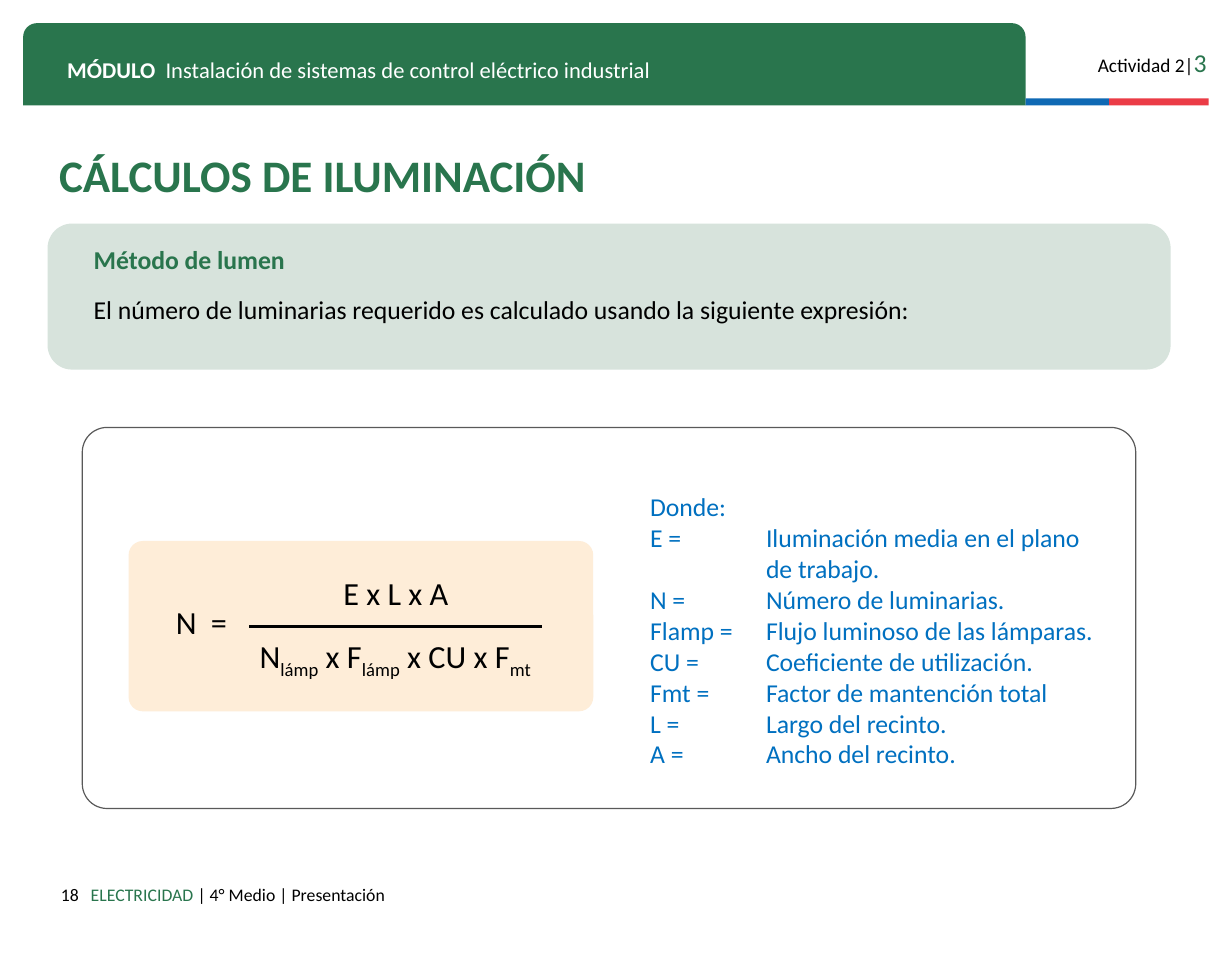
"""Builds the lighting calculation slide: lumen method formula and its terms."""
import pptx
import pptx.dml.color
import pptx.enum.shapes
import pptx.enum.text
import pptx.oxml
import pptx.util

WIDTH, HEIGHT = 10.63, 8.27
FONT = "Calibri"
GREEN, BLACK, WHITE, BLUE = "29754D", "000000", "FFFFFF", "0070C0"
LEFT, CENTER, RIGHT = (pptx.enum.text.PP_ALIGN.LEFT, pptx.enum.text.PP_ALIGN.CENTER,
                       pptx.enum.text.PP_ALIGN.RIGHT)
TOP, MIDDLE = pptx.enum.text.MSO_ANCHOR.TOP, pptx.enum.text.MSO_ANCHOR.MIDDLE
KIND = pptx.enum.shapes.MSO_SHAPE

# Areas are (left, top, width, height) in percent of the slide.
TITLE = "CÁLCULOS DE ILUMINACIÓN"
TITLE_AREA = (3.86, 15.6, 91.16, 6.29)
TERMS = [
    ("E =", "Iluminación media en el plano"),
    ("", "de trabajo."),
    ("N =", "Número de luminarias."),
    ("Flamp =", "Flujo luminoso de las lámparas."),
    ("CU =", "Coeficiente de utilización."),
    ("Fmt =", "Factor de mantención total"),
    ("L =", "Largo del recinto."),
    ("A =", "Ancho del recinto."),
]
TERMS_AREA = (51.83, 49.58, 40.26, 32.41)

PANELS = [
    (KIND.ROUND_2_SAME_RECTANGLE, (1.88, 2.42, 81.37, 8.59), (0.167, 0), GREEN, None),
    (KIND.RECTANGLE, (83.25, 10.28, 6.77, 0.73), (), "0F69B4", None),
    (KIND.RECTANGLE, (90.03, 10.28, 8.09, 0.73), (), "EB3C46", None),
    (KIND.ROUNDED_RECTANGLE, (3.86, 23.34, 91.16, 15.24), (0.168,), "D7E3DC", None),
    (KIND.ROUNDED_RECTANGLE, (6.68, 44.62, 85.51, 39.78), (0.065,), None, "595959"),
    (KIND.ROUNDED_RECTANGLE, (10.44, 56.47, 37.72, 17.78), (0.083,), "FEEDD8", None),
]

# Runs are (text, size, colour, bold, baseline).
ACTIVITY = [("Actividad 2|", 12, BLACK, False, 0), ("3", 16, GREEN, False, 0)]
MODULE = [("MÓDULO", 14, WHITE, True, 0),
          ("\tInstalación de sistemas de control eléctrico industrial", 14, WHITE, False, 0)]
PAGE = [("18", 11, BLACK, False, 0)]
COURSE = [("ELECTRICIDAD ", 11, GREEN, False, 0),
          ("| 4° Medio | Presentación", 11, BLACK, False, 0)]
METHOD = [("Método de lumen", 16, GREEN, True, 0)]
METHOD_TEXT = [("El número de luminarias requerido es calculado usando la siguiente expresión:",
                16, BLACK, False, 0)]
RESULT = [("N\t=", 20, BLACK, False, 0)]
NUMERATOR = [("E x L x A", 20, BLACK, False, 0)]
DENOMINATOR = [(text, 20, BLACK, False, base) for text, base in
               [("N", 0), ("lámp", -25), (" x F", 0), ("lámp", -25), (" x CU x F", 0), ("mt", -25)]]

# Texts are (area, paragraphs, alignment, anchor, vertical inset, space before, hanging indent).
TEXTS = [
    ((86.83, 3.63, 12.04, 4.59), [ACTIVITY], RIGHT, TOP, 0.1, 0, 0),
    ((4.52, 4.59, 76.58, 4.23), [MODULE], LEFT, TOP, 0.1, 0, 0.85),
    ((1.88, 91.05, 5.46, 3.51), [PAGE], RIGHT, TOP, 0.1, 0, 0),
    ((6.44, 91.05, 69.8, 4.59), [COURSE], LEFT, TOP, 0.1, 0, 0),
    ((6.68, 23.34, 85.51, 12.58), [METHOD, METHOD_TEXT], LEFT, MIDDLE, 0.1, 12, 0),
    ((13.36, 62.27, 6.3, 5.32), [RESULT], LEFT, TOP, 0.05, 0, 0.3),
    ((20.23, 59.25, 23.8, 5.32), [NUMERATOR], CENTER, TOP, 0.05, 0, 0),
    ((19.57, 65.78, 25.02, 5.32), [DENOMINATOR], CENTER, TOP, 0.05, 0, 0),
]
FRACTION_BAR = (20.23, 65.42, 23.8, 0)


def rgb(colour):
    return pptx.dml.color.RGBColor.from_string(colour)


def place(area):
    sides = (WIDTH, HEIGHT, WIDTH, HEIGHT)
    return [pptx.util.Inches(share * side / 100) for share, side in zip(area, sides)]


def write(shape, paragraphs, align, anchor, inset, before=0, hang=0, spacing=1.0):
    frame = shape.text_frame
    frame.word_wrap = True
    frame.auto_size = pptx.enum.text.MSO_AUTO_SIZE.NONE
    frame.vertical_anchor = anchor
    frame.margin_left = frame.margin_right = pptx.util.Inches(0.1)
    frame.margin_top = frame.margin_bottom = pptx.util.Inches(inset)
    for number, runs in enumerate(paragraphs):
        paragraph = frame.add_paragraph() if number else frame.paragraphs[0]
        paragraph.alignment = align
        paragraph.line_spacing = spacing
        paragraph.space_before = pptx.util.Pt(before)
        properties = paragraph._p.get_or_add_pPr()
        properties.set("marL", str(pptx.util.Inches(hang)))
        properties.set("indent", str(-pptx.util.Inches(hang)))
        pptx.oxml.xmlchemy.OxmlElement
        properties.append(pptx.oxml.parse_xml(
            '<a:buNone xmlns:a="http://schemas.openxmlformats.org/drawingml/2006/main"/>'))
        for text, size, colour, bold, baseline in runs:
            run = paragraph.add_run()
            run.text = text
            run.font.name, run.font.size, run.font.bold = FONT, pptx.util.Pt(size), bold
            run.font.color.rgb = rgb(colour)
            if baseline:
                run.font._element.set("baseline", str(baseline * 1000))


def add_panel(slide, kind, area, corners, fill, line):
    panel = slide.shapes.add_shape(kind, *place(area))
    panel.shadow.inherit = False
    for index, corner in enumerate(corners):
        panel.adjustments[index] = corner
    if fill:
        panel.fill.solid()
        panel.fill.fore_color.rgb = rgb(fill)
    else:
        panel.fill.background()
    if line:
        panel.line.color.rgb = rgb(line)
        panel.line.width = pptx.util.Pt(0.75)
    else:
        panel.line.fill.background()


def add_bar(slide, area):
    left, top, width, height = place(area)
    bar = slide.shapes.add_connector(pptx.enum.shapes.MSO_CONNECTOR.STRAIGHT,
                                     left, top, left + width, top + height)
    bar.line.color.rgb = rgb(BLACK)
    bar.line.width = pptx.util.Pt(1.75)
    bar._element.spPr.append(pptx.oxml.parse_xml(
        '<a:effectLst xmlns:a="http://schemas.openxmlformats.org/drawingml/2006/main"/>'))


def main():
    deck = pptx.Presentation()
    deck.slide_width, deck.slide_height = pptx.util.Inches(WIDTH), pptx.util.Inches(HEIGHT)
    slide = deck.slides.add_slide(deck.slide_layouts[1])
    title, terms = slide.placeholders
    for holder, area in ((title, TITLE_AREA), (terms, TERMS_AREA)):
        holder.left, holder.top, holder.width, holder.height = place(area)
    write(title, [[(TITLE, 28, GREEN, True, 0)]], LEFT, MIDDLE, 0.1, spacing=0.8)
    lines = ["Donde:"] + [f"{symbol}\t{meaning}" for symbol, meaning in TERMS]
    write(terms, [[(line, 16, BLUE, False, 0)] for line in lines], LEFT, MIDDLE, 0.05, hang=1)
    for panel in PANELS:
        add_panel(slide, *panel)
    for area, *content in TEXTS:
        write(slide.shapes.add_textbox(*place(area)), *content)
    add_bar(slide, FRACTION_BAR)
    deck.save("out.pptx")


if __name__ == "__main__":
    main()
